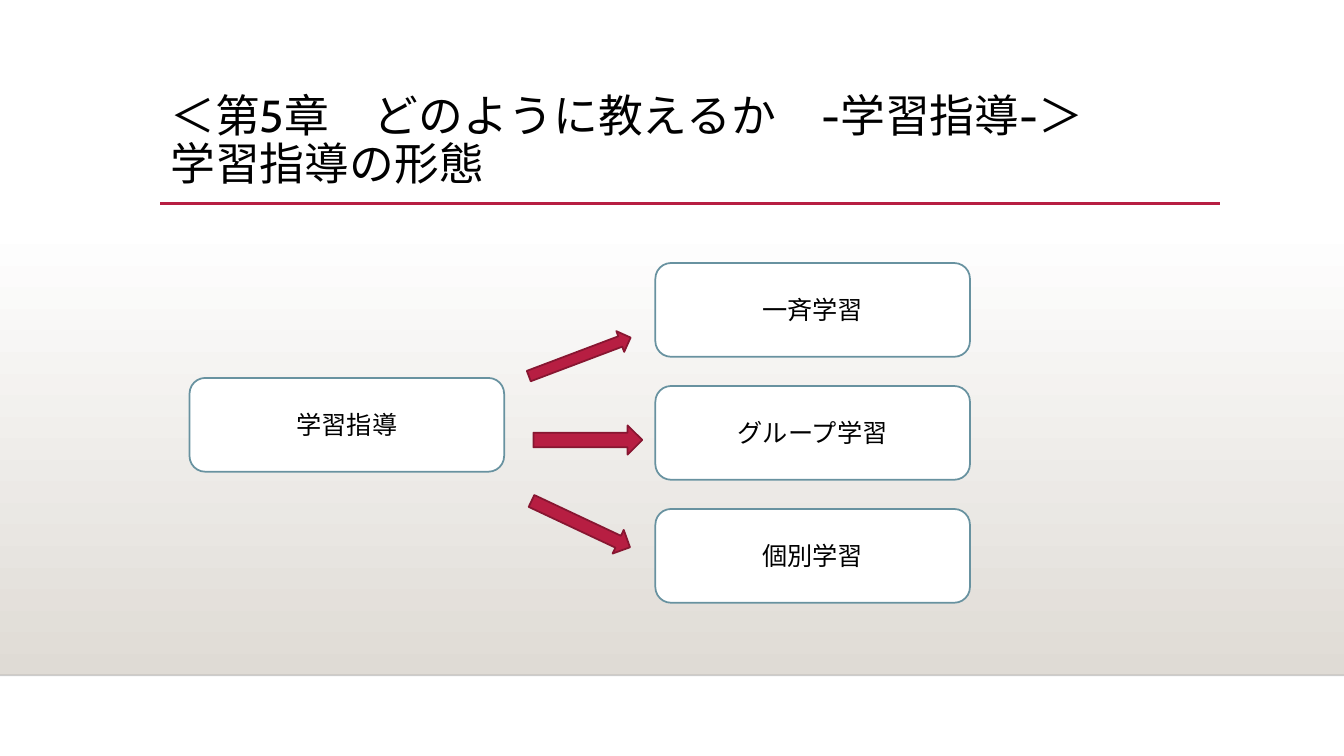
from lxml import etree
from pptx import Presentation
from pptx.dml.color import RGBColor
from pptx.enum import shapes, text
from pptx.oxml.ns import qn
from pptx.util import Inches, Pt

TITLE = ["＜第5章　どのように教えるか　-学習指導-＞", "学習指導の形態"]
TOPIC = "学習指導"
FORMS = ["一斉学習", "グループ学習", "個別学習"]
# left, top, height, rotation
ARROWS = [(5.21, 3.43, 0.22, 339.3), (5.29, 4.22, 0.29, 0), (5.22, 5.07, 0.26, 25.2)]

COLORS = {"white": "FFFFFF", "sand": "DFDBD5", "edge": "000001", "text": "000000",
          "red": "B71E42", "dark_red": "871631", "blue": "6892A0"}
FONT = "Cabin"
WIDTH, HEIGHT = 13.33, 7.5
FLOOR_TOP, FLOOR_BOTTOM = 2.21, 6.7
BOX_WIDTH, BOX_HEIGHT = 3.12, 0.93
TOPIC_LEFT, TOPIC_TOP = 1.88, 3.75
FORM_LEFT, FORM_TOP, FORM_STEP = 6.5, 2.61, 1.22
ARROW_WIDTH = 1.08


def color(name):
    return RGBColor.from_string(COLORS[name])


def style_text(para, size):
    formats = {"name": FONT, "size": Pt(size)}
    for key, value in formats.items():
        setattr(para.font, key, value)
    para.font.color.rgb = color("text")


def add_shape(page, kind, place, fill, line):
    shape = page.shapes.add_shape(kind, *map(Inches, place))
    shape.shadow.inherit = False
    shape.fill.solid()
    shape.fill.fore_color.rgb = color(fill)
    shape.line.color.rgb = color(line)
    shape.line.width = Pt(1.25)
    return shape


def add_rule(page, left, right, y, name, width):
    rule = page.shapes.add_connector(
        shapes.MSO_CONNECTOR.STRAIGHT, *map(Inches, (left, y, right, y)))
    rule.line.color.rgb = color(name)
    rule.line.width = Pt(width)
    props = rule._element.spPr
    etree.SubElement(props, qn("a:effectLst"))
    return props


def add_floor(page):
    floor = page.shapes.add_shape(
        shapes.MSO_SHAPE.RECTANGLE,
        *map(Inches, (0, FLOOR_TOP, WIDTH, FLOOR_BOTTOM - FLOOR_TOP)))
    floor.shadow.inherit = False
    floor.line.fill.background()
    floor.fill.gradient()
    floor.fill.gradient_angle = 270
    for stop, name in zip(floor.fill.gradient_stops, ("white", "sand")):
        stop.color.rgb = color(name)
    edge = add_rule(page, 0, WIDTH, FLOOR_BOTTOM, "edge", 1)
    tint = edge.find(".//" + qn("a:srgbClr"))
    etree.SubElement(tint, qn("a:alpha"), val="20000")


def add_title(page):
    box = page.shapes.add_textbox(*map(Inches, (1.59, 0.88, 10.5, 1.15)))
    box.text_frame.word_wrap = True
    box.text_frame.vertical_anchor = text.MSO_ANCHOR.TOP
    para = box.text_frame.paragraphs[0]
    para.text = "\v".join(TITLE)
    para.line_spacing = 0.9
    style_text(para, 32)
    for span in para.runs:
        style_text(span, 32)
    add_rule(page, 1.59, 12.1, 2.02, "red", 2.5)


def add_box(page, left, top, label):
    box = add_shape(page, shapes.MSO_SHAPE.ROUNDED_RECTANGLE,
                    (left, top, BOX_WIDTH, BOX_HEIGHT), "white", "blue")
    box.text_frame.vertical_anchor = text.MSO_ANCHOR.MIDDLE
    para = box.text_frame.paragraphs[0]
    para.text = label
    para.alignment = text.PP_ALIGN.CENTER
    style_text(para, 18)


def main():
    deck = Presentation()
    deck.slide_width, deck.slide_height = Inches(WIDTH), Inches(HEIGHT)
    page = deck.slides.add_slide(deck.slide_layouts[6])
    add_floor(page)
    add_title(page)
    add_box(page, TOPIC_LEFT, TOPIC_TOP, TOPIC)
    for row, label in enumerate(FORMS):
        add_box(page, FORM_LEFT, FORM_TOP + row * FORM_STEP, label)
    for left, top, height, rotation in ARROWS:
        arrow = add_shape(page, shapes.MSO_SHAPE.RIGHT_ARROW,
                          (left, top, ARROW_WIDTH, height), "red", "dark_red")
        arrow.rotation = rotation
    deck.save("out.pptx")


if __name__ == "__main__":
    main()
